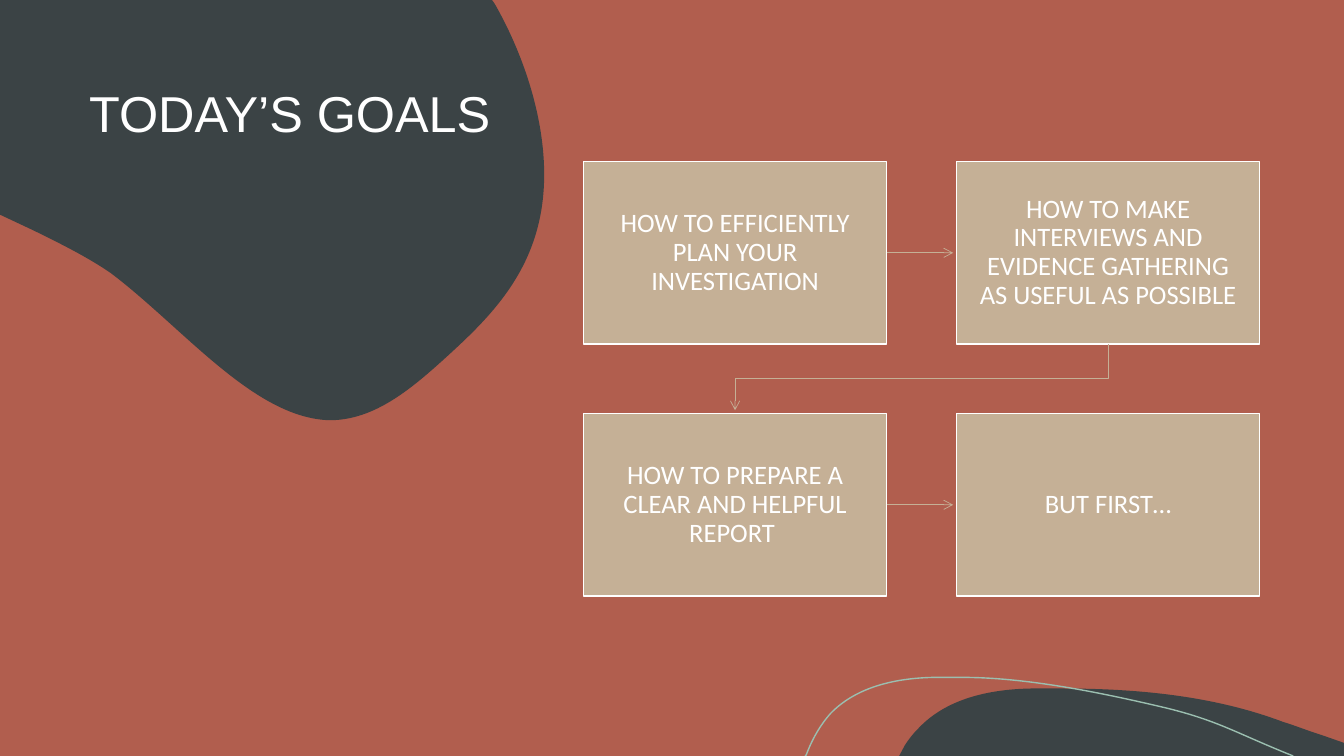
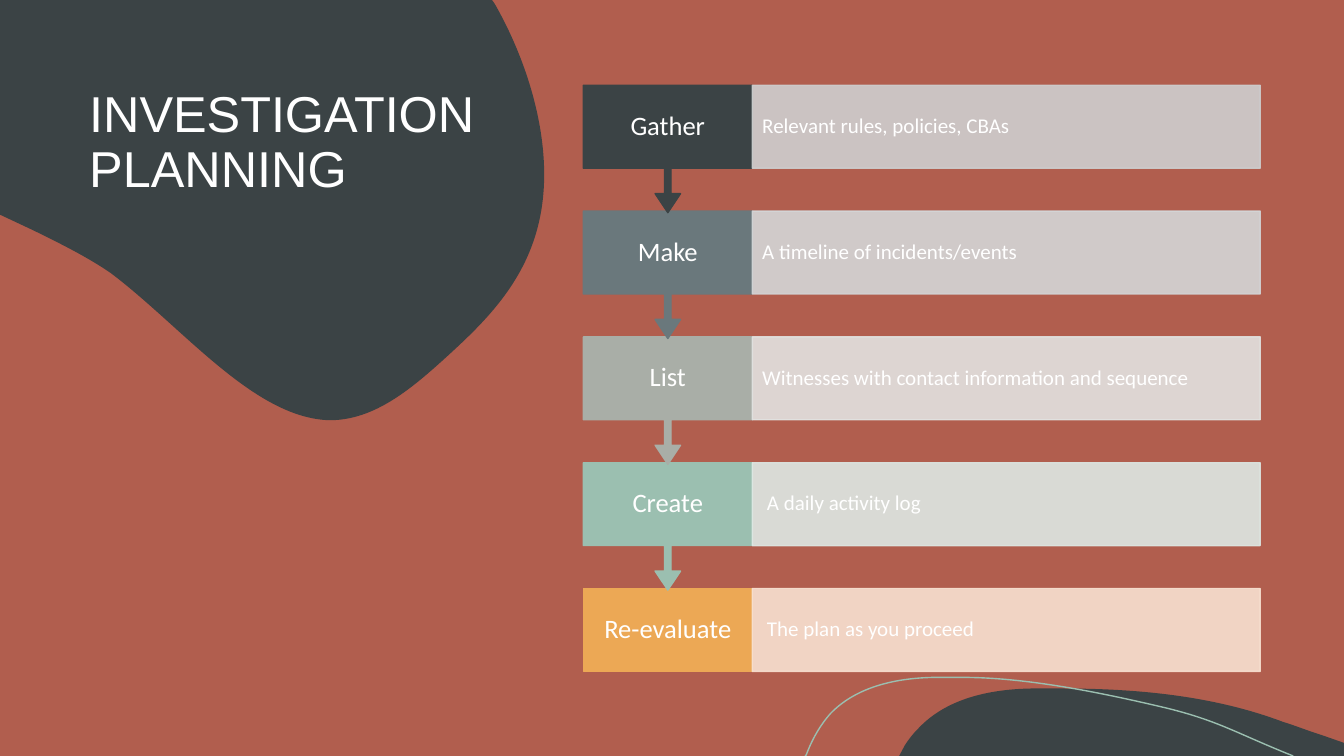
import lxml.etree
import pptx
import pptx.dml.color
import pptx.enum.shapes
import pptx.enum.text
import pptx.oxml.ns
import pptx.util

Cm = pptx.util.Cm
Pt = pptx.util.Pt
qn = pptx.oxml.ns.qn
SHAPES = pptx.enum.shapes.MSO_SHAPE
ALIGN = pptx.enum.text.PP_ALIGN
ANCHOR = pptx.enum.text.MSO_ANCHOR

# Shared look, lengths in centimetres
WIDTH, HEIGHT = 33.87, 19.05
RUST, SLATE, SAND, MINT, WHITE = "B15E4E", "3B4345", "C5B096", "9BBFB0", "FFFFFF"
CONTENT_LEFT = 14.7

# Outlines: a pair is a straight step, six numbers are a Bezier curve
CORNER_BLOB = [
    (0, 0), (12.4, 0), (12.47, 0.1),
    (13.28, 1.52, 13.84, 3.33, 13.69, 4.93),
    (13.51, 6.86, 12.34, 8, 11.28, 8.97),
    (10.39, 9.78, 9.45, 10.59, 8.31, 10.59),
    (6.4, 10.54, 4.62, 8.26, 2.79, 6.88),
    (2.24, 6.5, 1.55, 6.15, 0.81, 5.79), (0, 5.41), (0, 0),
]
BOTTOM_HILL = [
    (26.77, 17.35),
    (28.65, 17.35, 30.58, 17.53, 32.33, 18.19),
    (32.66, 18.29, 32.97, 18.42, 33.3, 18.52),
    (33.87, 18.72), (33.87, 19.05), (22.66, 19.05), (22.81, 18.77),
    (22.91, 18.62, 23.01, 18.49, 23.14, 18.36),
    (23.85, 17.6, 24.94, 17.37, 25.98, 17.35),
    (26.24, 17.35, 26.52, 17.35, 26.77, 17.35),
]
BOTTOM_WAVE = [
    (20.29, 19.05), (20.32, 19.02),
    (20.47, 18.62, 20.68, 18.26, 20.93, 17.98),
    (21.59, 17.3, 22.58, 17.09, 23.52, 17.07), (24.26, 17.07),
    (25.96, 17.07, 27.94, 17.5, 29.34, 17.83),
    (30.71, 18.16, 31.14, 18.47, 32.59, 19.05),
]

# Slide content
GOALS = [
    "HOW TO EFFICIENTLY PLAN YOUR INVESTIGATION",
    "HOW TO MAKE INTERVIEWS AND EVIDENCE GATHERING AS USEFUL AS POSSIBLE",
    "HOW TO PREPARE A CLEAR AND HELPFUL REPORT ",
    "BUT FIRST…",
]
# Step, detail, step colour, detail colour
STEPS = [
    ("Gather", "Relevant rules, policies, CBAs", SLATE, "CECFCF"),
    ("Make", "A timeline of incidents/events", "6A787C", "D4D6D7"),
    ("List", "Witnesses with contact information and sequence", "A9AEA7", "E2E3E1"),
    ("Create", " A daily activity log", MINT, "DEE8E4"),
    ("Re-evaluate", " The plan as you proceed", "ECA855", "F8E1D1"),
]


def color(value):
    return pptx.dml.color.RGBColor.from_string(value)


def style(shape, fill=None, line=None, width=1, opacity=None):
    """Set fill and line; opacity is a percentage for both."""
    shape.shadow.inherit = False
    if fill:
        shape.fill.solid()
        shape.fill.fore_color.rgb = color(fill)
    else:
        shape.fill.background()
    if line:
        shape.line.color.rgb = color(line)
        shape.line.width = Pt(width)
    else:
        shape.line.fill.background()
    if opacity:
        for tone in shape.element.spPr.iter(qn("a:srgbClr")):
            lxml.etree.SubElement(tone, qn("a:alpha"), val=str(opacity * 1000))


def write_text(shape, text, size, font="Calibri", align=ALIGN.CENTER,
               anchor=ANCHOR.MIDDLE, inset=(0.38, 0.38)):
    frame = shape.text_frame
    frame.word_wrap = True
    frame.vertical_anchor = anchor
    frame.margin_left = frame.margin_right = Cm(inset[0])
    frame.margin_top = frame.margin_bottom = Cm(inset[1])
    paragraph = frame.paragraphs[0]
    paragraph.alignment = align
    paragraph.line_spacing = 0.9
    run = paragraph.add_run()
    run.text = text
    run.font.name = font
    run.font.size = Pt(size)
    run.font.color.rgb = color(WHITE)


def add_box(slide, box, kind=SHAPES.RECTANGLE, **look):
    shape = slide.shapes.add_shape(kind, *map(Cm, box))
    style(shape, **look)
    return shape


def add_text_box(slide, box, text, **text_format):
    write_text(slide.shapes.add_textbox(*map(Cm, box)), text, **text_format)


def add_outline(slide, outline, closed=True, **look):
    ends = [(Cm(step[-2]), Cm(step[-1])) for step in outline]
    builder = slide.shapes.build_freeform(*ends[0], scale=1.0)
    builder.add_line_segments(ends[1:], close=closed)
    shape = builder.convert_to_shape()

    # Give the curved steps their two control points
    segments = list(shape.element.spPr.iter(qn("a:lnTo")))
    for step, segment in zip(outline[1:], segments):
        if len(step) == 6:
            segment.tag = qn("a:cubicBezTo")
            for place in (0, 1):
                x, y = step[2 * place:2 * place + 2]
                control = lxml.etree.Element(
                    qn("a:pt"), x=str(Cm(x) - shape.left), y=str(Cm(y) - shape.top))
                segment.insert(place, control)
    style(shape, **look)
    return shape


def add_arrowhead(shape):
    lxml.etree.SubElement(shape.get_or_add_ln(), qn("a:tailEnd"), type="arrow")


def add_arrow(slide, start, end):
    connector = slide.shapes.add_connector(
        pptx.enum.shapes.MSO_CONNECTOR.STRAIGHT, *map(Cm, start + end))
    connector.line.color.rgb = color(SAND)
    connector.line.width = Pt(0.5)
    add_arrowhead(connector)
    lxml.etree.SubElement(connector.element.spPr, qn("a:effectLst"))


def add_base_slide(presentation, title):
    """Background, organic shapes and title that every slide shares."""
    slide = presentation.slides.add_slide(presentation.slide_layouts[6])
    slide.background.fill.solid()
    slide.background.fill.fore_color.rgb = color(RUST)
    add_outline(slide, CORNER_BLOB, fill=SLATE)
    add_text_box(slide, (2, 2.12, 10.7, 6.35), title, size=36, font="Arial",
                 align=ALIGN.LEFT, anchor=ANCHOR.TOP, inset=(0.25, 0.13))
    add_outline(slide, BOTTOM_HILL, fill=SLATE)
    add_outline(slide, BOTTOM_WAVE, closed=False, line=MINT)
    return slide


def add_goal_cards(slide):
    top, width, height = 4.07, 7.65, 4.6
    pitch_x, pitch_y, head_gap = 9.4, 6.35, 0.08
    for index, goal in enumerate(GOALS):
        row, column = divmod(index, 2)
        left, card_top = CONTENT_LEFT + column * pitch_x, top + row * pitch_y
        card = add_box(slide, (left, card_top, width, height), fill=SAND, line=WHITE)
        write_text(card, goal, size=19)
        if column == 0:
            middle = card_top + height / 2
            add_arrow(slide, (left + width, middle),
                      (left + pitch_x - head_gap, middle))

    # Bent arrow from the second card to the third
    target_x = CONTENT_LEFT + width / 2
    source_x = target_x + pitch_x
    bottom, next_top = top + height, top + pitch_y
    bend = (bottom + next_top) / 2
    add_arrowhead(add_outline(
        slide, [(source_x, bottom), (source_x, bend), (target_x, bend),
                (target_x, next_top - head_gap)],
        closed=False, line=SAND, width=0.5))


def add_step_rows(slide):
    first_top, pitch, height, callout_height = 2.15, 3.17, 2.09, 3.21
    step_width, detail_width = 4.26, 12.8
    # From the bottom up, so that each arrow overlaps the next step
    for index, (step, detail, tone, pale) in reversed(list(enumerate(STEPS))):
        top = first_top + index * pitch
        step_box = (CONTENT_LEFT, top, step_width, height)
        if index == len(STEPS) - 1:
            add_box(slide, step_box, fill=tone, line=tone)
        else:
            callout = add_box(slide, (CONTENT_LEFT, top, step_width, callout_height),
                              SHAPES.UP_ARROW_CALLOUT, fill=tone, line=tone)
            callout.rotation = 180
            for place, value in enumerate((0.05, 0.1, 0.15, 0.65)):
                callout.adjustments[place] = value
        add_text_box(slide, step_box, step, size=19, inset=(0.3, 0.38))
        panel = add_box(slide, (CONTENT_LEFT + step_width, top, detail_width, height),
                        fill=pale, line=pale, opacity=90)
        write_text(panel, detail, size=15, align=ALIGN.LEFT, inset=(0.25, 0.53))


def main():
    presentation = pptx.Presentation()
    presentation.slide_width, presentation.slide_height = Cm(WIDTH), Cm(HEIGHT)
    add_goal_cards(add_base_slide(presentation, "TODAY’S GOALS"))
    add_step_rows(add_base_slide(presentation, "INVESTIGATION PLANNING"))
    presentation.save("out.pptx")


if __name__ == "__main__":
    main()
